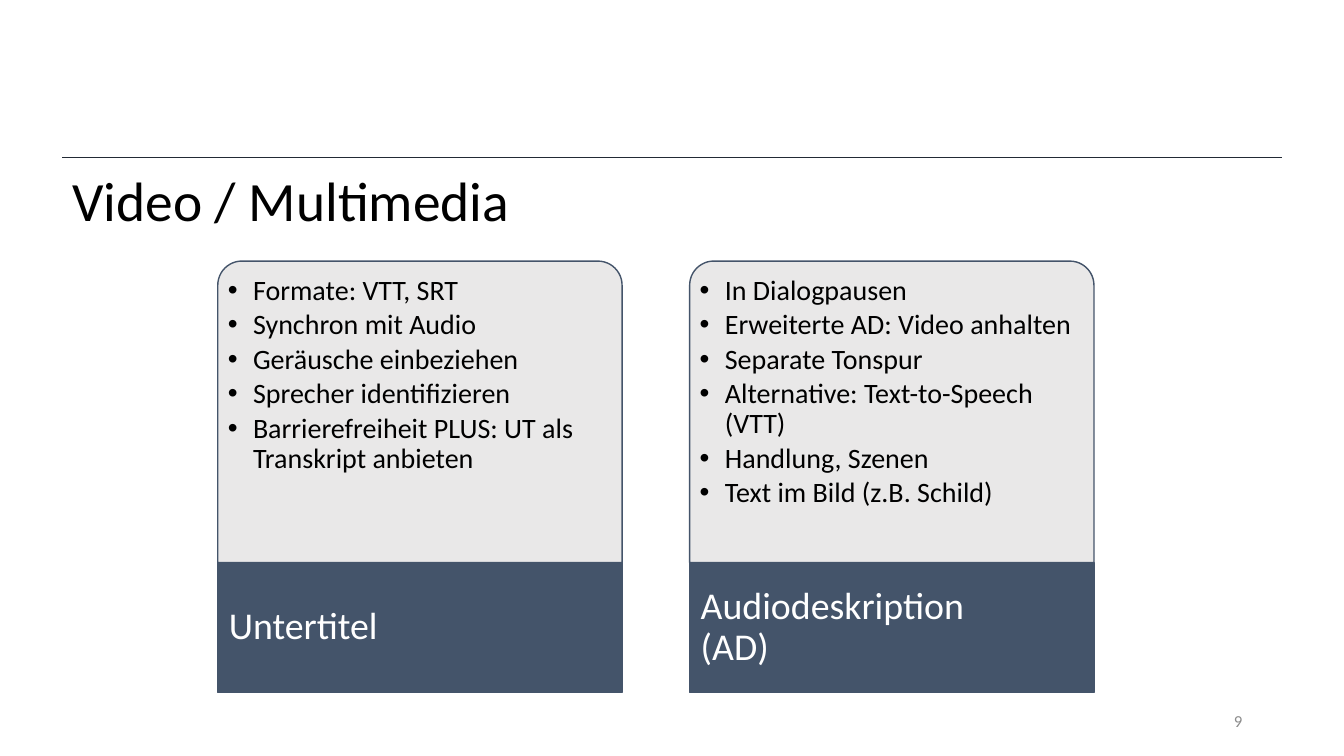
from lxml import etree
from pptx import Presentation
from pptx import util as u
from pptx.dml.color import RGBColor
from pptx.enum import shapes, text
from pptx.oxml.ns import qn

PX = 9144  # 100 px to the inch
BLACK = RGBColor(0x00, 0x00, 0x00)
WHITE = RGBColor(0xFF, 0xFF, 0xFF)
RULE = RGBColor(0x22, 0x2A, 0x35)
SLATE = RGBColor(0x44, 0x54, 0x6A)
PALE = RGBColor(0xE7, 0xE6, 0xE6)
GRAY = RGBColor(0x8C, 0x8C, 0x8C)

prs = Presentation()
prs.slide_width, prs.slide_height = 1333 * PX, 750 * PX
slide = prs.slides.add_slide(prs.slide_layouts[6])


def add_panel(kind, left, top, width, height, color):
    panel = slide.shapes.add_shape(kind, left * PX, top * PX, width * PX, height * PX)
    panel.shadow.inherit = False
    panel.fill.solid()
    panel.fill.fore_color.rgb = color
    panel.line.color.rgb = SLATE
    panel.line.width = u.Pt(1)
    return panel


def add_text(lines, box, size, color, insets=(10, 5, 10, 5), anchor=text.MSO_ANCHOR.MIDDLE,
             spacing=0.9, after=0, align=text.PP_ALIGN.LEFT, bullet=False):
    frame = slide.shapes.add_textbox(*(n * PX for n in box)).text_frame
    frame.word_wrap = True
    frame.vertical_anchor = anchor
    frame.margin_left, frame.margin_top, frame.margin_right, frame.margin_bottom = (
        n * PX for n in insets)
    frame.text = "\n".join(lines)
    for paragraph in frame.paragraphs:
        paragraph.alignment = align
        paragraph.line_spacing = spacing
        paragraph.space_after = u.Pt(after)
        if bullet:
            props = paragraph._p.get_or_add_pPr()
            props.set("marL", str(25 * PX))
            props.set("indent", str(-25 * PX))
            etree.SubElement(props, qn("a:buFont"), typeface="Arial")
            etree.SubElement(props, qn("a:buChar"), char="•")
        paragraph.font.name = "Calibri"
        paragraph.font.size = u.Pt(size)
        paragraph.font.color.rgb = color


# Rule and title
rule = slide.shapes.add_connector(
    shapes.MSO_CONNECTOR.STRAIGHT, 62 * PX, 156 * PX, 1272 * PX, 156 * PX)
rule.line.color.rgb = RULE
rule.line.width = u.Pt(0.5)
etree.SubElement(rule._element.spPr, qn("a:effectLst"))
add_text(["Video / Multimedia"], (62, 167, 1210, 70), 39.6, BLACK)

# Two cards: bullet list above, heading below
cards = [
    ("Untertitel", [
        "Formate: VTT, SRT",
        "Synchron mit Audio",
        "Geräusche einbeziehen",
        "Sprecher identifizieren",
        "Barrierefreiheit PLUS: UT als Transkript anbieten",
    ]),
    ("Audiodeskription (AD)", [
        "In Dialogpausen",
        "Erweiterte AD: Video anhalten",
        "Separate Tonspur",
        "Alternative: Text-to-Speech (VTT)",
        "Handlung, Szenen",
        "Text im Bild (z.B. Schild)",
    ]),
]
for column, (heading, points) in enumerate(cards):
    left = 216 + 468 * column
    body = add_panel(shapes.MSO_SHAPE.ROUND_2_SAME_RECTANGLE, left, 259, 401, 299, PALE)
    body.adjustments[0] = 0.08
    body.adjustments[1] = 0
    body_color = body.fill._xPr.find(qn("a:solidFill"))[0]
    etree.SubElement(body_color, qn("a:alpha"), val="90000")
    add_text(points, (left + 7, 266, 387, 292), 20, BLACK, insets=(3, 8, 3, 3),
             anchor=text.MSO_ANCHOR.TOP, after=3, bullet=True)
    add_panel(shapes.MSO_SHAPE.RECTANGLE, left, 558, 401, 129, SLATE)
    add_text([heading], (left, 558, 282, 129), 27, WHITE, insets=(11, 0, 4, 0))

# Slide number
add_text(["9"], (942, 695, 300, 40), 12, GRAY, spacing=1.0, align=text.PP_ALIGN.RIGHT)

prs.save("out.pptx")
